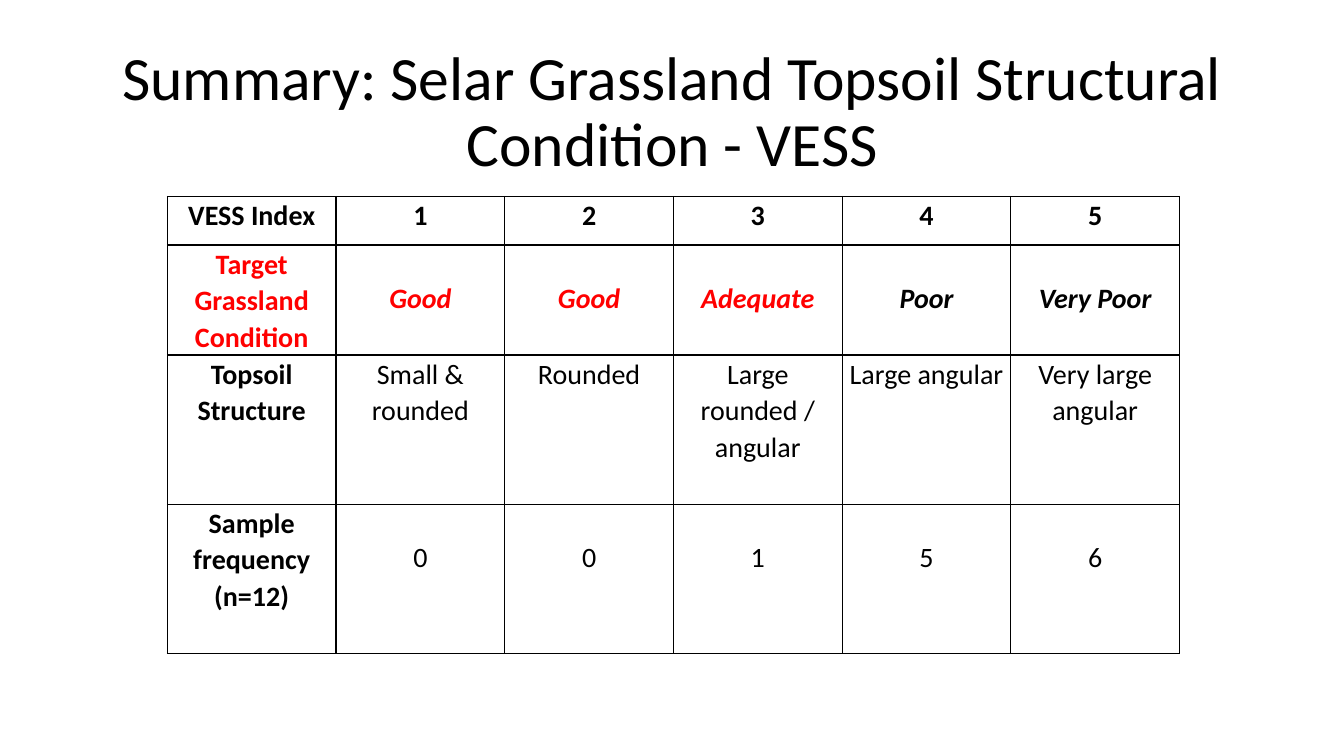
"""Build the VESS topsoil summary slide: a title above a bordered table."""
from lxml.etree import SubElement
from pptx import Presentation
from pptx.dml.color import RGBColor
from pptx.enum.text import MSO_ANCHOR as Anchor, PP_ALIGN as Align
from pptx.oxml.ns import qn
from pptx.util import Inches, Pt

TITLE = "Summary: Selar Grassland Topsoil Structural Condition - VESS"
ROWS = [
    ["VESS Index", "1", "2", "3", "4", "5"],
    ["Target Grassland Condition", "Good", "Good", "Adequate", "Poor", "Very Poor"],
    ["Topsoil Structure", "Small & rounded", "Rounded", "Large rounded / angular",
     "Large angular", "Very large angular"],
    ["Sample frequency (n=12)", "0", "0", "1", "5", "6"],
]
HEADER, CONDITION, STRUCTURE, FREQUENCY = range(4)
TARGETS = {"Target Grassland Condition", "Good", "Adequate"}
COLORS = {"text": "000000", "target": "FF0000"}
FONT = "Calibri"
ROW_HEIGHTS = [0.48, 0.98, 1.48, 1.48]
LEFT, TOP, WIDTH = 1.66, 1.95, 10.04
SIDE_MARGIN, LOWERED_MARGIN = 0.07, 0.34


def write(para, text, size, color, spacing, bold=False, italic=False):
    para.alignment = Align.CENTER
    para.line_spacing = spacing
    span = para.add_run()
    span.text = text
    span.font.name = FONT
    span.font.size = Pt(size)
    span.font.bold = bold
    span.font.italic = italic
    span.font.color.rgb = RGBColor.from_string(COLORS[color])


def add_borders(cell):
    properties = cell._tc.get_or_add_tcPr()
    for position, side in enumerate(("lnL", "lnR", "lnT", "lnB")):
        line = properties.makeelement(qn(f"a:{side}"), {"w": str(Pt(1))})
        fill = SubElement(line, qn("a:solidFill"))
        SubElement(fill, qn("a:srgbClr"), val=COLORS["text"])
        properties.insert(position, line)


def add_title(page):
    title = page.shapes.title
    title.left, title.top = Inches(0.92), Inches(0.4)
    title.width, title.height = Inches(11.5), Inches(1.45)
    title.text_frame.word_wrap = True
    title.text_frame.vertical_anchor = Anchor.MIDDLE
    write(title.text_frame.paragraphs[0], TITLE, 44, "text", 0.9)


def fill_cell(cell, text, row, column):
    lowered = column > 0 and row in (CONDITION, FREQUENCY)
    cell.fill.background()
    cell.margin_left = cell.margin_right = Inches(SIDE_MARGIN)
    cell.margin_top = Inches(LOWERED_MARGIN if lowered else 0)
    cell.margin_bottom = 0
    cell.vertical_anchor = Anchor.TOP
    write(cell.text_frame.paragraphs[0], text, 20,
          "target" if text in TARGETS else "text", 1.07,
          bold=column == 0 or row in (HEADER, CONDITION),
          italic=column > 0 and row == CONDITION)
    add_borders(cell)


def add_condition_table(page):
    columns = len(ROWS[0])
    frame = page.shapes.add_table(len(ROWS), columns, Inches(LEFT), Inches(TOP),
                                  Inches(WIDTH), Inches(sum(ROW_HEIGHTS)))
    table = frame.table
    table.first_row = table.horz_banding = False
    for column in table.columns:
        column.width = Inches(WIDTH / columns)
    for row, (texts, height) in enumerate(zip(ROWS, ROW_HEIGHTS)):
        table.rows[row].height = Inches(height)
        for column, text in enumerate(texts):
            fill_cell(table.cell(row, column), text, row, column)


def main():
    deck = Presentation()
    deck.slide_width, deck.slide_height = Inches(13.33), Inches(7.5)
    page = deck.slides.add_slide(deck.slide_layouts.get_by_name("Title Only"))
    add_title(page)
    add_condition_table(page)
    deck.save("out.pptx")


if __name__ == "__main__":
    main()
